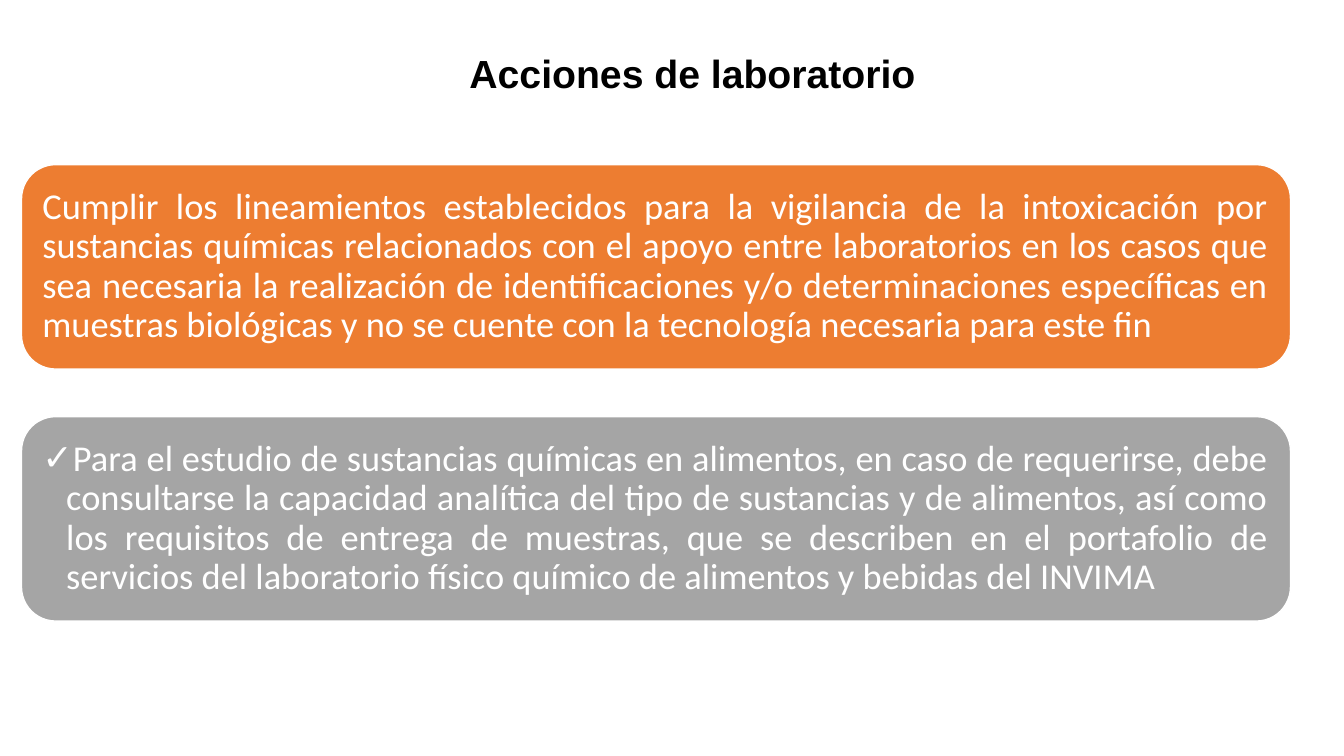
from dataclasses import dataclass
from typing import Any, Optional

import pptx
import pptx.dml.color
import pptx.enum.shapes
import pptx.enum.text
import pptx.oxml.ns
import pptx.util
from lxml import etree

Pt = pptx.util.Pt
RGBColor = pptx.dml.color.RGBColor
Alignment = pptx.enum.text.PP_ALIGN
Anchor = pptx.enum.text.MSO_ANCHOR

BLACK = RGBColor(0x00, 0x00, 0x00)
WHITE = RGBColor(0xFF, 0xFF, 0xFF)
ORANGE = RGBColor(0xED, 0x7D, 0x31)
GRAY = RGBColor(0xA5, 0xA5, 0xA5)

TITLE_FONT = {"name": "Arial", "size": Pt(28), "bold": True}
CARD_FONT = {"name": "Calibri", "size": Pt(26), "bold": False}
CARD_LEFT, CARD_TOP, CARD_WIDTH, CARD_HEIGHT = 15.4, 117.6, 906.4, 146
CARD_PITCH = 180
CARD_INSET = 7.8
BULLET_INDENT = 17


@dataclass(frozen=True)
class Card:
    text: str
    fill: RGBColor
    bullet: Optional[str] = None


CARDS = [
    Card(
        "Cumplir los lineamientos establecidos para la vigilancia de la intoxicación "
        "por sustancias químicas relacionados con el apoyo entre laboratorios en los "
        "casos que sea necesaria la realización de identificaciones y/o "
        "determinaciones específicas en muestras biológicas y no se cuente con la "
        "tecnología necesaria para este fin",
        ORANGE,
    ),
    Card(
        "Para el estudio de sustancias químicas en alimentos, en caso de requerirse, "
        "debe consultarse la capacidad analítica del tipo de sustancias y de "
        "alimentos, así como los requisitos de entrega de muestras, que se describen "
        "en el portafolio de servicios del laboratorio físico químico de alimentos y "
        "bebidas del INVIMA",
        GRAY,
        "✓",
    ),
]


def set_attributes(target: Any, values: dict[str, Any]) -> None:
    for name, value in values.items():
        setattr(target, name, value)


def add_bullet(paragraph: Any, character: str) -> None:
    properties = paragraph._p.get_or_add_pPr()
    properties.set("marL", str(Pt(BULLET_INDENT)))
    properties.set("indent", str(-Pt(BULLET_INDENT)))
    qualified = pptx.oxml.ns.qn
    etree.SubElement(properties, qualified("a:buFont"), typeface="Arial")
    etree.SubElement(properties, qualified("a:buChar"), char=character)


def write_text(shape: Any, text: str, alignment: Any, font: dict[str, Any],
               color: RGBColor, bullet: Optional[str] = None) -> None:
    frame = shape.text_frame
    set_attributes(frame, {
        "text": text,
        "word_wrap": True,
        "auto_size": pptx.enum.text.MSO_AUTO_SIZE.NONE,
        "vertical_anchor": Anchor.MIDDLE,
    })
    paragraph = frame.paragraphs[0]
    set_attributes(paragraph, {"alignment": alignment, "line_spacing": 0.9, "space_before": Pt(0)})
    if bullet:
        add_bullet(paragraph, bullet)
    set_attributes(paragraph.font, font)
    paragraph.font.color.rgb = color


def add_title(slide: Any) -> None:
    title = slide.shapes.title
    set_attributes(title, {"left": Pt(80.6), "top": Pt(23.8), "width": Pt(828), "height": Pt(60)})
    write_text(title, "Acciones de laboratorio", Alignment.CENTER, TITLE_FONT, BLACK)


def add_card(slide: Any, card: Card, top: float) -> None:
    shape = slide.shapes.add_shape(
        pptx.enum.shapes.MSO_SHAPE.ROUNDED_RECTANGLE,
        Pt(CARD_LEFT), Pt(top), Pt(CARD_WIDTH), Pt(CARD_HEIGHT),
    )
    shape.shadow.inherit = False
    shape.fill.solid()
    shape.fill.fore_color.rgb = card.fill
    shape.line.color.rgb = WHITE
    shape.line.width = Pt(1)
    sides = ("left", "top", "right", "bottom")
    set_attributes(shape.text_frame, {f"margin_{side}": Pt(CARD_INSET) for side in sides})
    write_text(shape, card.text, Alignment.JUSTIFY, CARD_FONT, WHITE, card.bullet)


def main() -> None:
    presentation = pptx.Presentation()
    set_attributes(presentation, {"slide_width": Pt(960), "slide_height": Pt(540)})
    title_only = presentation.slide_layouts.get_by_name("Title Only")
    slide = presentation.slides.add_slide(title_only)
    add_title(slide)
    for index, card in enumerate(CARDS):
        add_card(slide, card, CARD_TOP + index * CARD_PITCH)
    presentation.save("out.pptx")


if __name__ == "__main__":
    main()
